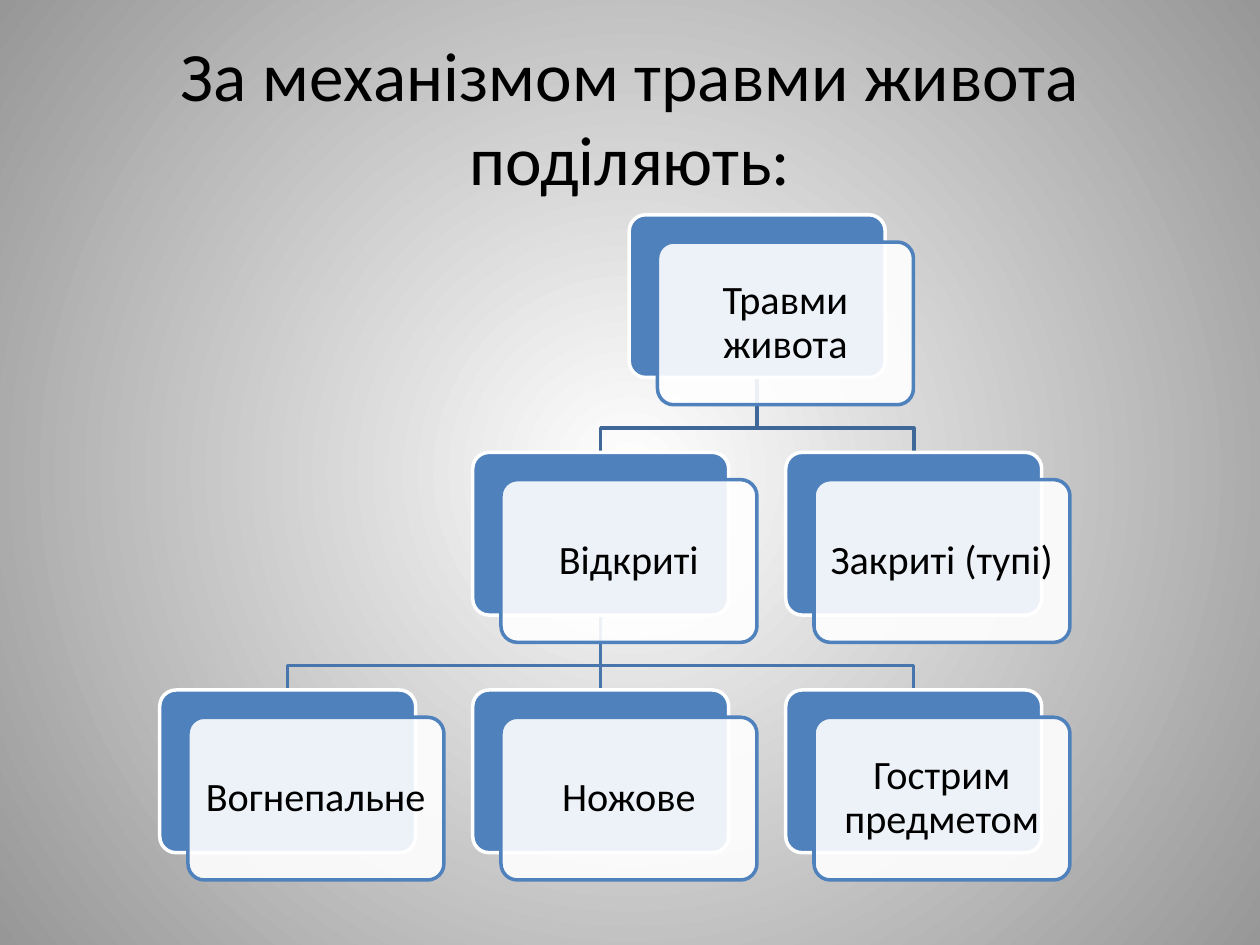
from dataclasses import dataclass

from lxml.etree import SubElement
from pptx import Presentation
from pptx.dml.color import RGBColor
from pptx.enum.shapes import MSO_CONNECTOR as Connector
from pptx.enum.shapes import MSO_SHAPE as Shape
from pptx.enum.text import MSO_ANCHOR as Anchor
from pptx.enum.text import MSO_AUTO_SIZE as AutoSize
from pptx.enum.text import PP_ALIGN as Align
from pptx.oxml.ns import qn
from pptx.util import Cm, Pt


@dataclass(frozen=True)
class Theme:
    font: str = "Calibri"
    title_size: float = 39.6
    card_size: float = 23
    line_width: float = 2
    text: str = "000000"
    white: str = "FFFFFF"
    edge: str = "979797"
    card: str = "4F81BD"
    upper_link: str = "3F6797"
    lower_link: str = "4875AC"


THEME = Theme()
TITLE = "За механізмом травми живота поділяють:"
LEFT, TOP = 3.22, 4.33
COLUMN_STEP, ROW_STEP = 6.31, 4.79
CARD_WIDTH, CARD_HEIGHT = 5.16, 3.28
SHIFT_X, SHIFT_Y = 0.57, 0.55
ELBOW_DROP = 1.02

CARDS = {
    "root": (1.5, 0, "Травми живота"),
    "open": (1, 1, "Відкриті"),
    "closed": (2, 1, "Закриті (тупі)"),
    "gunshot": (0, 2, "Вогнепальне"),
    "knife": (1, 2, "Ножове"),
    "sharp": (2, 2, "Гострим предметом"),
}
LINKS = [
    ("root", "open", THEME.upper_link),
    ("root", "closed", THEME.upper_link),
    ("open", "gunshot", THEME.lower_link),
    ("open", "knife", THEME.lower_link),
    ("open", "sharp", THEME.lower_link),
]


def apply(target, values):
    for name, value in values.items():
        setattr(target, name, value)


def rgb(color):
    return RGBColor.from_string(color)


def set_line(shape, color):
    shape.line.color.rgb = rgb(color)
    shape.line.width = Pt(THEME.line_width)


def set_text(shape, text, size, line_spacing, inset):
    frame = shape.text_frame
    margins = {f"margin_{side}": Cm(inset) for side in ("left", "top", "right", "bottom")}
    apply(frame, {"word_wrap": True, "auto_size": AutoSize.NONE,
                  "vertical_anchor": Anchor.MIDDLE, **margins})
    para = frame.paragraphs[0]
    apply(para, {"alignment": Align.CENTER, "line_spacing": line_spacing})
    span = para.add_run()
    span.text = text
    apply(span.font, {"name": THEME.font, "size": Pt(size)})
    span.font.color.rgb = rgb(THEME.text)


def set_background(page):
    fill = page.background.fill
    fill.gradient()
    for stop, color in zip(fill.gradient_stops, (THEME.white, THEME.edge)):
        stop.color.rgb = rgb(color)
    gradient = page.element.find(".//" + qn("a:gradFill"))
    gradient.remove(gradient.find(qn("a:lin")))
    circle = SubElement(gradient, qn("a:path"), path="circle")
    SubElement(circle, qn("a:fillToRect"), l="50000", t="50000", r="50000", b="50000")


def add_title(page):
    title = page.shapes.title
    apply(title, {"left": Cm(0.7), "top": Cm(0.43), "width": Cm(24), "height": Cm(3.81)})
    set_text(title, TITLE, THEME.title_size, 1.0, 0.25)


def add_panel(page, left, top, fill, line):
    panel = page.shapes.add_shape(Shape.ROUNDED_RECTANGLE, Cm(left), Cm(top),
                                  Cm(CARD_WIDTH), Cm(CARD_HEIGHT))
    panel.adjustments[0] = 0.1
    panel.shadow.inherit = False
    panel.fill.solid()
    panel.fill.fore_color.rgb = rgb(fill)
    set_line(panel, line)
    return panel


def add_card(page, column, row, text):
    left, top = LEFT + column * COLUMN_STEP, TOP + row * ROW_STEP
    back = add_panel(page, left, top, THEME.card, THEME.white)
    front = add_panel(page, left + SHIFT_X, top + SHIFT_Y, THEME.white, THEME.card)
    color = front.element.spPr.find(qn("a:solidFill")).find(qn("a:srgbClr"))
    SubElement(color, qn("a:alpha"), val="90000")
    set_text(front, text, THEME.card_size, 0.9, 0.16)
    return back


def add_straight(page, parent, child):
    link = page.shapes.add_connector(Connector.STRAIGHT, 0, 0, 0, 0)
    link.begin_connect(parent, 2)
    link.end_connect(child, 0)
    return link


def add_elbow(page, parent, child):
    start_x, end_x = (card.left + card.width // 2 for card in (parent, child))
    start_y = parent.top + parent.height
    bend_y = start_y + Cm(ELBOW_DROP)
    builder = page.shapes.build_freeform(start_x, start_y)
    builder.add_line_segments([(start_x, bend_y), (end_x, bend_y), (end_x, child.top)],
                              close=False)
    link = builder.convert_to_shape()
    link.fill.background()
    return link


def add_link(page, parent, child, color):
    draw = add_straight if parent.left == child.left else add_elbow
    link = draw(page, parent, child)
    set_line(link, color)
    SubElement(link.element.spPr, qn("a:effectLst"))
    page.shapes.title.element.addnext(link.element)


def main():
    deck = Presentation()
    apply(deck, {"slide_width": Cm(25.4), "slide_height": Cm(19.05)})
    page = deck.slides.add_slide(deck.slide_layouts[5])
    set_background(page)
    add_title(page)
    cards = {name: add_card(page, *card) for name, card in CARDS.items()}
    for parent, child, color in LINKS:
        add_link(page, cards[parent], cards[child], color)
    deck.save("out.pptx")


if __name__ == "__main__":
    main()
